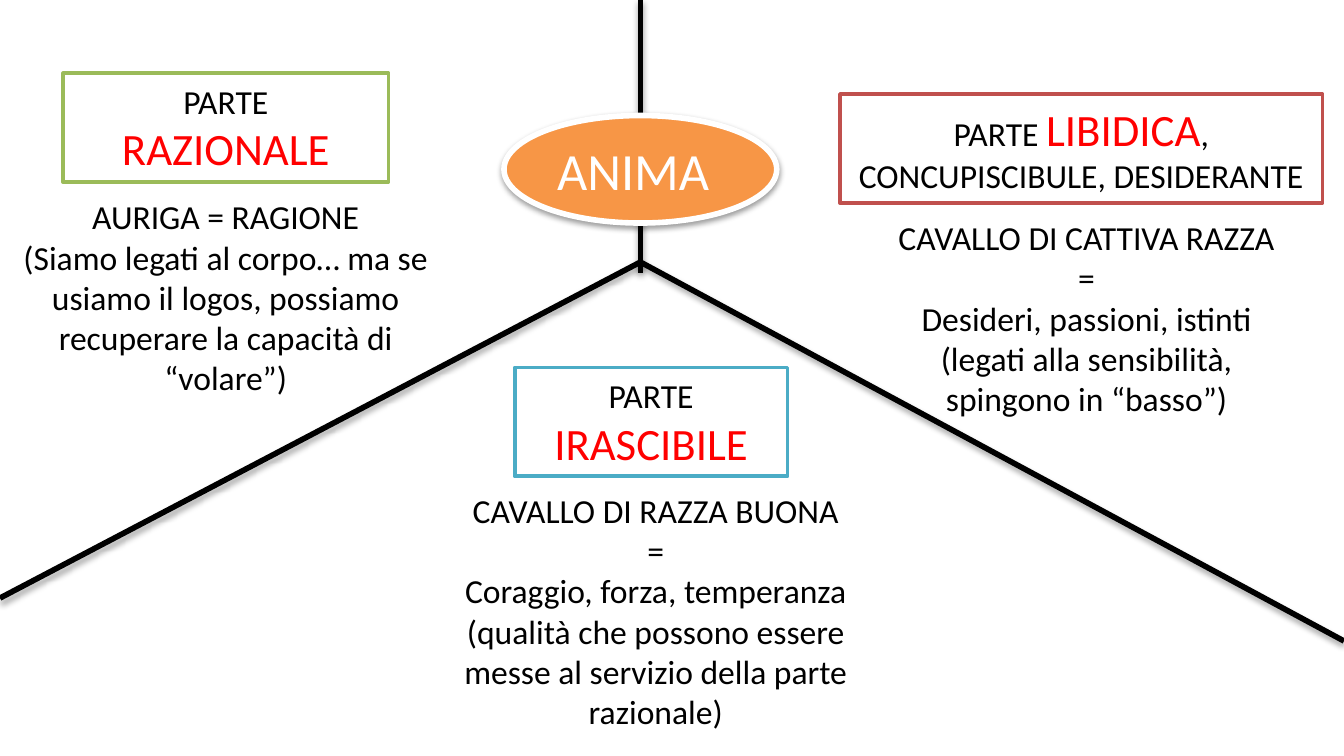
import pptx
import pptx.dml.color
import pptx.enum.shapes
import pptx.enum.text
import pptx.oxml
import pptx.oxml.ns
import pptx.util

PX = 4572  # 200 px to the inch
COLOURS = {
    "black": "000000", "white": "FFFFFF", "emphasis": "FF0000", "soul": "F79646",
    "rational": "9BBB59", "irascible": "4BACC6", "libidinal": "C0504D",
}
RGB = {name: pptx.dml.color.RGBColor.from_string(value) for name, value in COLOURS.items()}
SHAPES = pptx.enum.shapes.MSO_SHAPE
ALIGN = pptx.enum.text.PP_ALIGN


def add_shadow(shape, opacity, distance):
    """Give the shape a soft shadow that falls straight down; distance is in EMU."""
    shape._element.spPr.append(pptx.oxml.parse_xml(
        f'<a:effectLst {pptx.oxml.ns.nsdecls("a")}>'
        f'<a:outerShdw blurRad="40000" dist="{distance}" dir="5400000" rotWithShape="0">'
        f'<a:srgbClr val="{COLOURS["black"]}"><a:alpha val="{opacity * 1000}"/></a:srgbClr>'
        '</a:outerShdw></a:effectLst>'))


def write_paragraphs(box, paragraphs, alignment=ALIGN.CENTER):
    """Fill the box with paragraphs, each a list of (text, size, colour) spans."""
    frame = box.text_frame
    frame.word_wrap = True
    for index, spans in enumerate(paragraphs):
        para = frame.paragraphs[0] if index == 0 else frame.add_paragraph()
        para.alignment = alignment
        for text, size, colour in spans:
            span = para.add_run()
            span.text = text
            formats = {"name": "Calibri", "size": pptx.util.Pt(size)}
            for attribute, value in formats.items():
                setattr(span.font, attribute, value)
            span.font.color.rgb = RGB[colour]


deck = pptx.Presentation()
deck.slide_width, deck.slide_height = 2000 * PX, 1125 * PX
page = deck.slides.add_slide(deck.slide_layouts[6])

# Lines that divide the page into three parts
for ends in [(953, 0, 953, 406), (953, 390, 0, 890), (953, 390, 2000, 954)]:
    divider = page.shapes.add_connector(
        pptx.enum.shapes.MSO_CONNECTOR.STRAIGHT, *(end * PX for end in ends))
    divider.line.color.rgb = RGB["black"]
    divider.line.width = pptx.util.Pt(3)
    add_shadow(divider, 35, 23000)

# The soul and the title of each part
titles = [
    (SHAPES.RECTANGLE, (1250, 140, 718, 162), "white", "libidinal", 2,
     [("PARTE ", 18, "black"), ("LIBIDICA", 24, "emphasis"),
      (", CONCUPISCIBULE, DESIDERANTE", 18, "black")]),
    (SHAPES.OVAL, (750, 172, 406, 160), "soul", "white", 3, [("ANIMA", 28, "white")]),
    (SHAPES.RECTANGLE, (766, 547, 406, 162), "white", "irascible", 2,
     [("PARTE ", 18, "black"), ("IRASCIBILE", 24, "emphasis")]),
    (SHAPES.RECTANGLE, (94, 109, 484, 162), "white", "rational", 2,
     [("PARTE ", 18, "black"), ("RAZIONALE", 24, "emphasis")]),
]
for kind, place, fill, outline, width, spans in titles:
    title = page.shapes.add_shape(kind, *(length * PX for length in place))
    title.fill.solid()
    title.fill.fore_color.rgb = RGB[fill]
    title.line.color.rgb = RGB[outline]
    title.line.width = pptx.util.Pt(width)
    if kind == SHAPES.OVAL:
        add_shadow(title, 38, 20000)
        write_paragraphs(title, [spans], ALIGN.LEFT)
    else:
        title.shadow.inherit = False
        write_paragraphs(title, [spans])

# What each part stands for
descriptions = [
    ((0, 282, 672, 324),
     ["AURIGA = RAGIONE",
      "(Siamo legati al corpo… ma se usiamo il logos, possiamo recuperare la capacità di “volare”)"]),
    ((656, 719, 640, 384),
     ["CAVALLO DI RAZZA BUONA", "=", "Coraggio, forza, temperanza",
      "(qualità che possono essere messe al servizio della parte razionale)"]),
    ((1297, 313, 640, 324),
     ["CAVALLO DI CATTIVA RAZZA", "=", "Desideri, passioni, istinti",
      "(legati alla sensibilità, spingono in “basso”)"]),
]
for place, lines in descriptions:
    box = page.shapes.add_textbox(*(length * PX for length in place))
    write_paragraphs(box, [[(line, 18, "black")] for line in lines])

deck.save("out.pptx")
